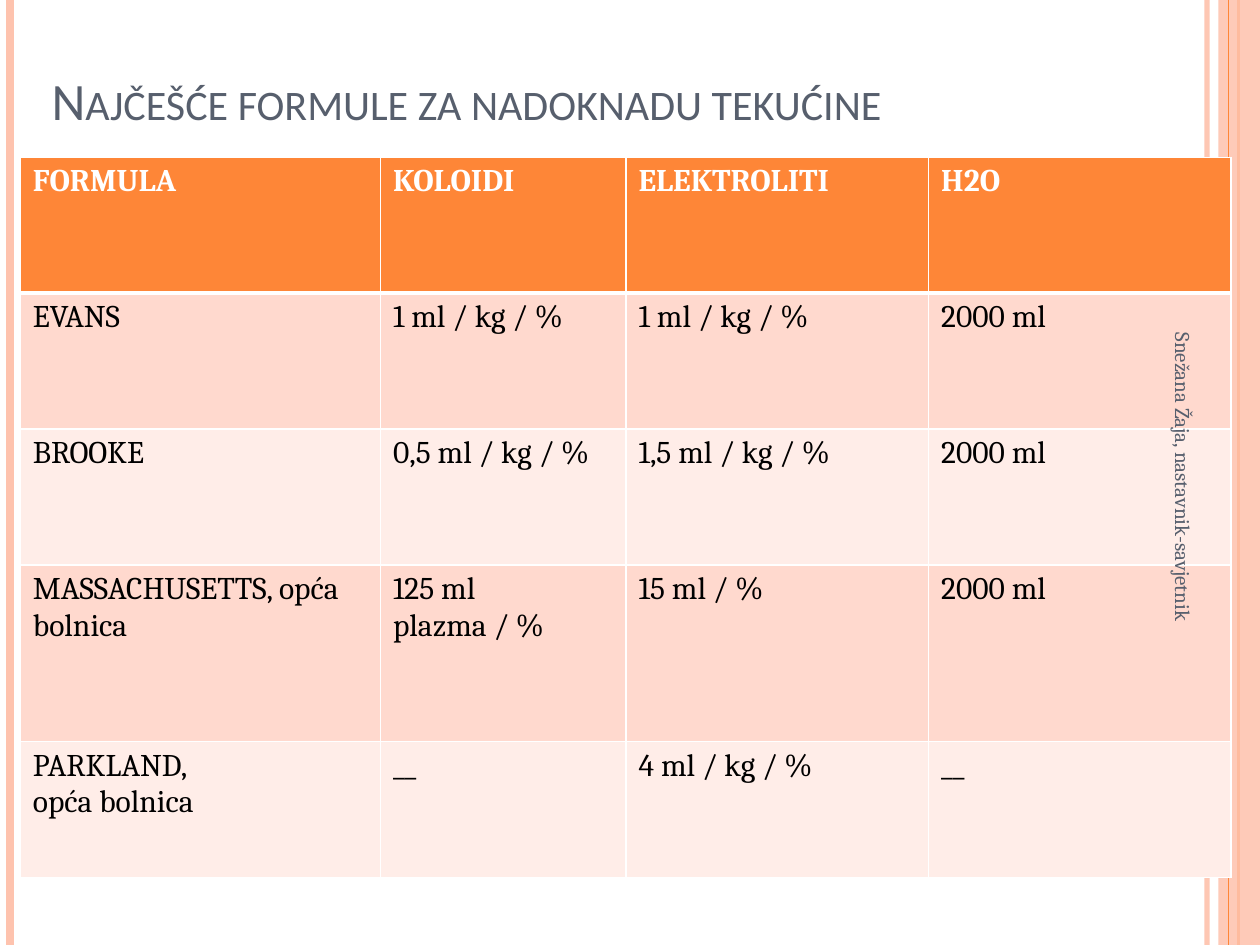
import pptx
import pptx.util
import pptx.dml.color
import pptx.enum.shapes
import pptx.enum.text
import pptx.oxml
import pptx.oxml.ns

Cm, Pt = pptx.util.Cm, pptx.util.Pt
ANCHOR = pptx.enum.text.MSO_ANCHOR
ORANGE, PEACH, SLATE, WHITE, BLACK = "FE8637", "FEC3AE", "575F6D", "FFFFFF", "000000"
BANDS = "FFD9CE", "FFEDE8"
COLS = 7.26, 4.95, 6.1, 6.1
ROWS = 2.74, 2.74, 2.74, 3.56, 2.74
DATA = [
    ["FORMULA", "KOLOIDI", "ELEKTROLITI", "H2O"],
    ["EVANS", "1 ml / kg / %", "1 ml / kg / %", "2000 ml"],
    ["BROOKE", "0,5 ml / kg / %", "1,5 ml / kg / %", "2000 ml"],
    ["MASSACHUSETTS, opća bolnica", "125 ml\nplazma / %", "15 ml / %", "2000 ml"],
    ["PARKLAND,\nopća bolnica", "__", "4 ml / kg / %", "__"],
]


def paint(item, color, alpha=100):
    item.solid()
    item.fore_color.rgb = pptx.dml.color.RGBColor.from_string(color)
    if alpha < 100:
        for node in item._xPr.iter(pptx.oxml.ns.qn("a:srgbClr")):
            tag = pptx.oxml.ns.qn("a:alpha")
            node.append(node.makeelement(tag, {"val": str(alpha * 1000)}))


def write(frame, text, font="Cambria", size=18, color=BLACK, bold=False, small=False):
    frame.word_wrap = True
    for i, part in enumerate(text.split("\n")):
        para = frame.add_paragraph() if i else frame.paragraphs[0]
        run = para.add_run()
        run.text = part
        run.font.name, run.font.size, run.font.bold = font, Pt(size), bold
        paint(run.font.fill, color)
        if small:
            run.font._element.set("cap", "small")


def edge(cell, widths):
    props = cell._tc.get_or_add_tcPr()
    for i, (side, width) in enumerate(zip("LRTB", widths)):
        props.insert(i, pptx.oxml.parse_xml(
            f'<a:ln{side} {pptx.oxml.ns.nsdecls("a")} w="{Pt(width)}"><a:solidFill>'
            f'<a:srgbClr val="{WHITE}"/></a:solidFill></a:ln{side}>'))


class Deck:
    """Draw styled elements on the current slide."""

    def __init__(self):
        self.prs = pptx.Presentation()
        self.prs.slide_width, self.prs.slide_height = Cm(25.4), Cm(19.05)
        self.slide = self.prs.slides.add_slide(self.prs.slide_layouts[6])
        self.shapes = self.slide.shapes

    def rule(self, x, color, width, alpha=100):
        kind = pptx.enum.shapes.MSO_CONNECTOR.STRAIGHT
        line = self.shapes.add_connector(kind, Cm(x), 0, Cm(x), self.prs.slide_height)
        line.line.width = Pt(width)
        paint(line.line.fill, color, alpha)
        props = line._element.spPr
        props.append(props.makeelement(pptx.oxml.ns.qn("a:effectLst"), {}))

    def band(self, x, width, color, alpha):
        kind = pptx.enum.shapes.MSO_SHAPE.RECTANGLE
        rect = self.shapes.add_shape(kind, Cm(x), 0, Cm(width), self.prs.slide_height)
        rect.shadow.inherit = False
        rect.line.fill.background()
        paint(rect.fill, color, alpha)

    def text(self, box, text, anchor, turn=0, **style):
        item = self.shapes.add_textbox(*map(Cm, box))
        item.rotation = turn
        item.text_frame.vertical_anchor = anchor
        write(item.text_frame, text, **style)

    def table(self, x, y, data, cols, rows):
        grid = self.shapes.add_table(len(rows), len(cols), Cm(x), Cm(y),
                                     Cm(sum(cols)), Cm(sum(rows))).table
        for col, width in zip(grid.columns, cols):
            col.width = Cm(width)
        for r, (row, height) in enumerate(zip(grid.rows, rows)):
            row.height = Cm(height)
            for cell, text in zip(row.cells, data[r]):
                head = r == 0
                write(cell.text_frame, text, color=WHITE if head else BLACK, bold=head)
                paint(cell.fill, ORANGE if head else BANDS[(r - 1) % 2])
                edge(cell, (1, 1, 3 if r == 1 else 1, 3 if head else 1))


def main():
    deck = Deck()
    deck.rule(24.33, PEACH, 3, 93)
    deck.rule(0.2, PEACH, 4.5)
    deck.rule(24.97, ORANGE, 1.5)
    deck.band(24.56, 0.84, PEACH, 87)
    deck.rule(24.77, ORANGE, 0.75)
    deck.text((0.79, 1.19, 20.75, 1.57), "Najčešće formule za nadoknadu tekućine",
              ANCHOR.BOTTOM, font="Calibri", size=30, color=SLATE, small=True)
    deck.table(0.41, 3.17, DATA, COLS, ROWS)
    deck.text((19.41, 10.39, 8.89, 1.02), "Snežana Žaja, nastavnik-savjetnik",
              ANCHOR.MIDDLE, turn=90, size=12, color=SLATE)
    deck.prs.save("out.pptx")


if __name__ == "__main__":
    main()
